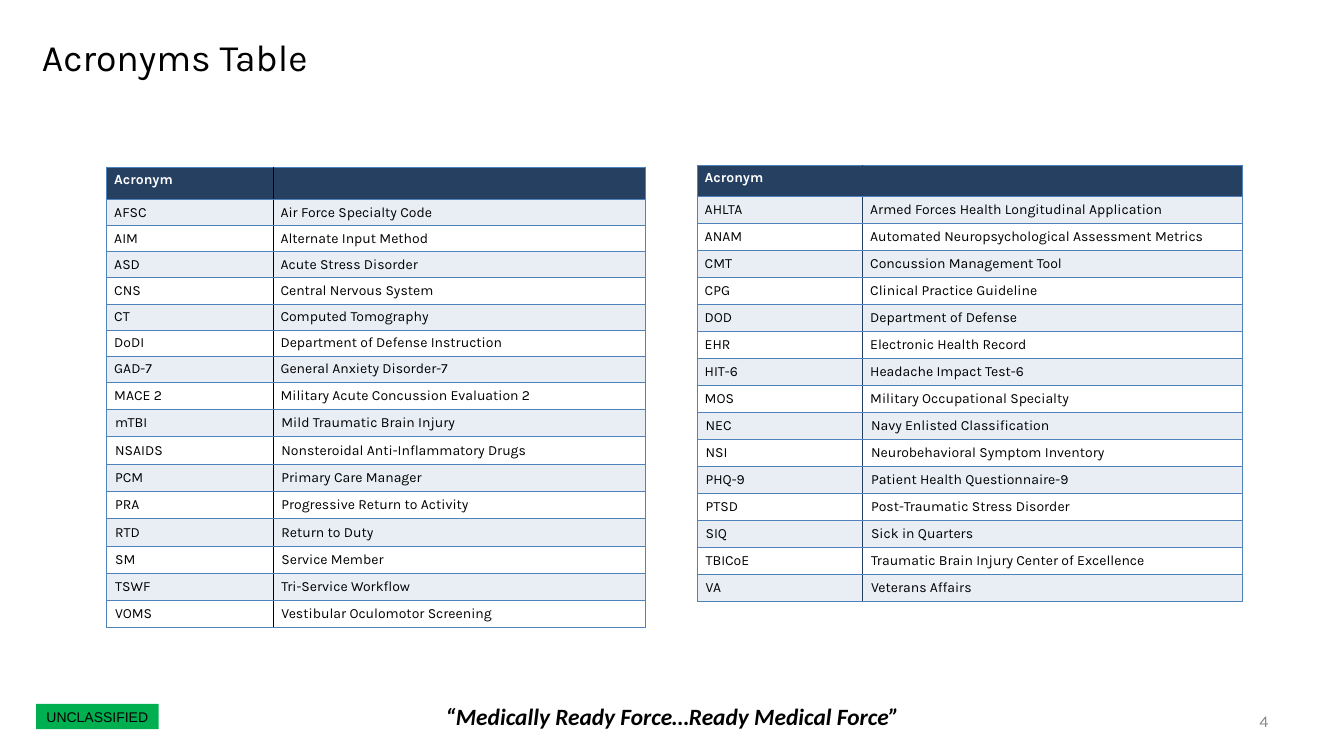
from lxml.etree import SubElement
from pptx import Presentation
from pptx.dml.color import RGBColor
from pptx.enum.shapes import MSO_SHAPE
from pptx.enum.text import MSO_ANCHOR, PP_ALIGN
from pptx.oxml.ns import qn
from pptx.util import Inches, Pt

# Content
TITLE = "Acronyms Table"
MARKING = "UNCLASSIFIED"
MOTTO = "“Medically Ready Force…Ready Medical Force”"
PAGE_NUMBER = "4"
HEADER = ("Acronym", "")
LEFT_ACRONYMS = [
    ("AFSC", "Air Force Specialty Code"),
    ("AIM", "Alternate Input Method"),
    ("ASD", "Acute Stress Disorder"),
    ("CNS", "Central Nervous System"),
    ("CT", "Computed Tomography"),
    ("DoDI", "Department of Defense Instruction"),
    ("GAD-7", "General Anxiety Disorder-7"),
    ("MACE 2", "Military Acute Concussion Evaluation 2"),
    ("mTBI", "Mild Traumatic Brain Injury"),
    ("NSAIDS", "Nonsteroidal Anti-Inflammatory Drugs"),
    ("PCM", "Primary Care Manager"),
    ("PRA", "Progressive Return to Activity"),
    ("RTD", "Return to Duty"),
    ("SM", "Service Member"),
    ("TSWF", "Tri-Service Workflow"),
    ("VOMS", "Vestibular Oculomotor Screening"),
]
RIGHT_ACRONYMS = [
    ("AHLTA", "Armed Forces Health Longitudinal Application"),
    ("ANAM", "Automated Neuropsychological Assessment Metrics"),
    ("CMT", "Concussion Management Tool"),
    ("CPG", "Clinical Practice Guideline"),
    ("DOD", "Department of Defense"),
    ("EHR", "Electronic Health Record"),
    ("HIT-6", "Headache Impact Test-6"),
    ("MOS", "Military Occupational Specialty"),
    ("NEC", "Navy Enlisted Classification"),
    ("NSI", "Neurobehavioral Symptom Inventory"),
    ("PHQ-9", "Patient Health Questionnaire-9"),
    ("PTSD", "Post-Traumatic Stress Disorder"),
    ("SIQ", "Sick in Quarters"),
    ("TBICoE", "Traumatic Brain Injury Center of Excellence"),
    ("VA", "Veterans Affairs"),
]

# Style
NAVY, BLUE, PALE, WHITE, BLACK = "254061", "4F81BD", "E9EDF4", "FFFFFF", "000000"
GREEN, GREY = "00B050", "898989"
FONT = "Karla"
CELL_SIZE = 12
TIGHT_ROWS = 8  # the first body rows have a slightly smaller side margin

# entries, (left, top), column widths, header height, compact rows, height, divider
TABLES = [
    (LEFT_ACRONYMS, (1.27, 1.99), (1.98, 4.44), 0.39, [0.31] * 7, 5.49, BLACK),
    (RIGHT_ACRONYMS, (8.3, 1.97), (1.97, 4.52), 0.37, [], 5.19, NAVY),
]


def color(value):
    return RGBColor.from_string(value)


def write(frame, text, size, ink, font=FONT, bold=False, italic=False,
          align=PP_ALIGN.LEFT):
    para = frame.paragraphs[0]
    para.alignment = align
    span = para.add_run()
    span.text = text
    span.font.size, span.font.name = Pt(size), font
    span.font.bold, span.font.italic = bold, italic
    span.font.color.rgb = color(ink)


def add_label(page, place, text, size, ink, anchor=MSO_ANCHOR.MIDDLE, **style):
    box = page.shapes.add_textbox(*map(Inches, place))
    box.text_frame.word_wrap = True
    box.text_frame.vertical_anchor = anchor
    write(box.text_frame, text, size, ink, **style)


def set_borders(cell, sides):
    properties = cell._tc.get_or_add_tcPr()
    for index, (side, ink) in enumerate(sides.items()):
        line = properties.makeelement(qn(f"a:ln{side}"), {"w": str(Pt(1))})
        properties.insert(index, line)
        SubElement(SubElement(line, qn("a:solidFill")), qn("a:srgbClr"), val=ink)


def add_acronyms(page, entries, corner, widths, head, compact, height, divider):
    rows = [HEADER] + entries
    fixed = [head] + compact
    rest = len(rows) - len(fixed)
    heights = fixed + [(height - sum(fixed)) / rest] * rest
    table = page.shapes.add_table(
        len(rows), len(widths), *map(Inches, (*corner, sum(widths), height))).table
    for column, width in zip(table.columns, widths):
        column.width = Inches(width)
    for r, (texts, row_height) in enumerate(zip(rows, heights)):
        table.rows[r].height = Inches(row_height)
        for c, text in enumerate(texts):
            cell = table.cell(r, c)
            cell.fill.solid()
            cell.fill.fore_color.rgb = color(NAVY if r == 0 else PALE if r % 2 else WHITE)
            cell.vertical_anchor = MSO_ANCHOR.MIDDLE if r else MSO_ANCHOR.TOP
            cell.margin_left = cell.margin_right = Inches(0.09 if r <= TIGHT_ROWS else 0.1)
            cell.margin_top = cell.margin_bottom = Inches(0.05)
            if text:
                write(cell.text_frame, text, CELL_SIZE, BLACK if r else WHITE, bold=r == 0)
            else:
                SubElement(cell.text_frame.paragraphs[0]._p, qn("a:endParaRPr"),
                           sz=str(CELL_SIZE * 100))
            set_borders(cell, {"L": divider if c else BLUE, "R": BLUE if c else divider,
                               "T": BLUE, "B": BLUE})


def main():
    deck = Presentation()
    deck.slide_width, deck.slide_height = Inches(16), Inches(9)
    page = deck.slides.add_slide(deck.slide_layouts[6])

    # Classification marking
    marking = page.shapes.add_shape(
        MSO_SHAPE.RECTANGLE, *map(Inches, (0.43, 8.38, 1.46, 0.3)))
    marking.shadow.inherit = False
    marking.fill.solid()
    marking.fill.fore_color.rgb = color(GREEN)
    marking.line.fill.background()
    marking.text_frame.vertical_anchor = MSO_ANCHOR.MIDDLE
    write(marking.text_frame, MARKING, 12, BLACK, font="Arial", align=PP_ALIGN.CENTER)

    # Motto and title
    add_label(page, (4.88, 8.33, 6.25, 0.4), MOTTO, 20, BLACK, font="Calibri",
              bold=True, italic=True, align=PP_ALIGN.CENTER)
    add_label(page, (0.4, 0.36, 11.87, 1.5), TITLE, 32, BLACK, anchor=MSO_ANCHOR.TOP)

    # Acronym tables
    for table in TABLES:
        add_acronyms(page, *table)

    # Page number
    add_label(page, (13.33, 8.34, 1.87, 0.48), PAGE_NUMBER, 14, GREY,
              align=PP_ALIGN.RIGHT)
    deck.save("out.pptx")


if __name__ == "__main__":
    main()
